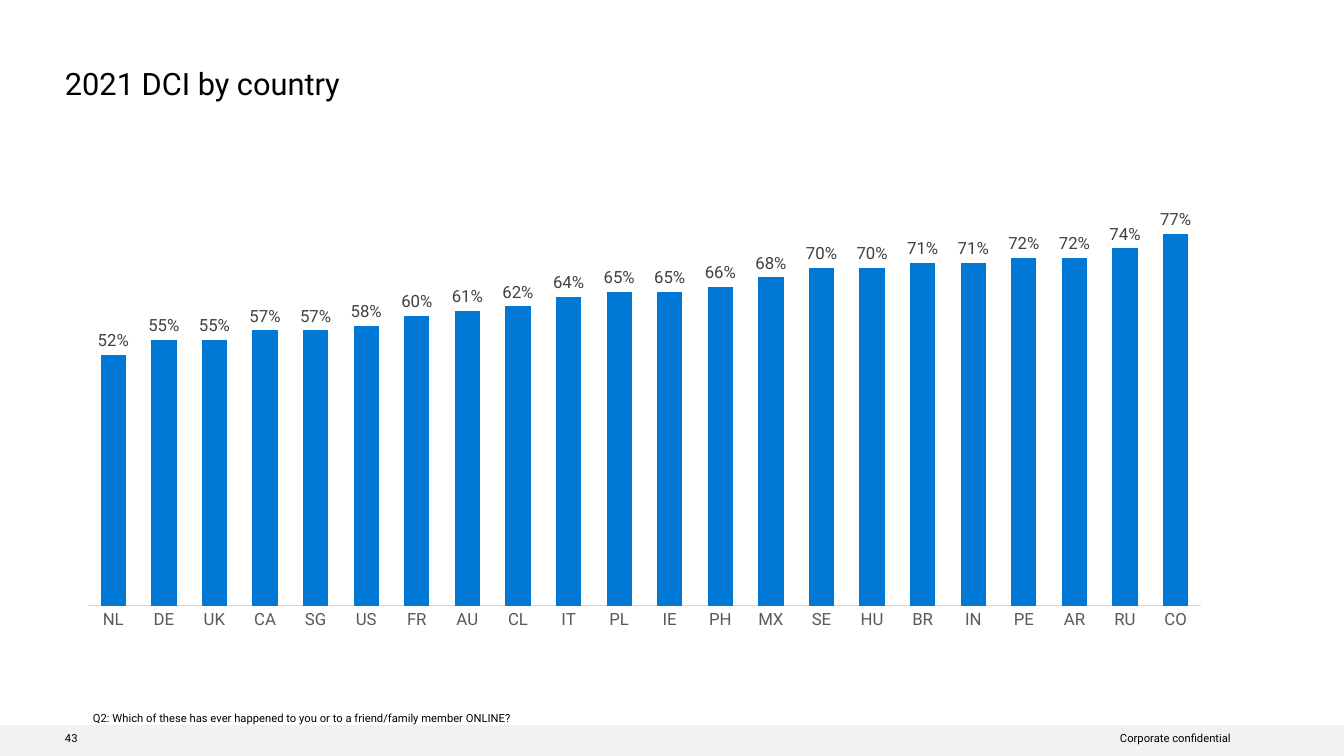
from lxml.etree import SubElement
from pptx import Presentation
from pptx.chart.data import CategoryChartData
from pptx.dml.color import RGBColor
from pptx.enum.chart import XL_CHART_TYPE as ChartType
from pptx.enum.chart import XL_LABEL_POSITION as LabelPosition
from pptx.enum.chart import XL_TICK_MARK as TickMark
from pptx.enum.shapes import MSO_SHAPE as Shape
from pptx.enum.text import MSO_ANCHOR as Anchor
from pptx.enum.text import PP_ALIGN as Align
from pptx.oxml.ns import qn
from pptx.util import Emu, Pt

TITLE = "2021 DCI by country"
QUESTION = "Q2: Which of these has ever happened to you or to a friend/family member ONLINE?"
PAGE_NUMBER = "43"
CONFIDENTIAL = "Corporate confidential"
PERCENT_BY_COUNTRY = {
    "NL": 52, "DE": 55, "UK": 55, "CA": 57, "SG": 57, "US": 58, "FR": 60, "AU": 61,
    "CL": 62, "IT": 64, "PL": 65, "IE": 65, "PH": 66, "MX": 68, "SE": 70, "HU": 70,
    "BR": 71, "IN": 71, "PE": 72, "AR": 72, "RU": 74, "CO": 77,
}

FONT = "Roboto"
BLACK = RGBColor(0x00, 0x00, 0x00)
BLUE = RGBColor(0x00, 0x78, 0xD4)
LABEL_GRAY = RGBColor(0x40, 0x40, 0x40)
AXIS_GRAY = RGBColor(0x59, 0x59, 0x59)
LINE_GRAY = RGBColor(0xD9, 0xD9, 0xD9)
FOOTER_GRAY = RGBColor(0xF2, 0xF2, 0xF2)

WIDTH, HEIGHT = 1344, 756
CHART_BOX = (65, 160, 1159, 480)
PLOT_BOX = (88, 171, 1113, 435)


def px(*lengths):
    return [Emu(round(length * 914400 / 100.8)) for length in lengths]


def style_font(font, size, color):
    font.name = FONT
    font.size = Pt(size)
    font.color.rgb = color


def add_text(slide, text, box, size=8, align=Align.LEFT, insets=(0, 0, 0, 0),
             line_spacing=0.9, wrap=True):
    frame = slide.shapes.add_textbox(*px(*box)).text_frame
    frame.word_wrap = wrap
    frame.vertical_anchor = Anchor.TOP
    (frame.margin_left, frame.margin_top,
     frame.margin_right, frame.margin_bottom) = px(*insets)
    paragraph = frame.paragraphs[0]
    paragraph.alignment = align
    paragraph.line_spacing = line_spacing
    run = paragraph.add_run()
    run.text = text
    style_font(run.font, size, BLACK)


def place_plot_area(chart):
    """Fix the inner plot area at PLOT_BOX, as fractions of CHART_BOX."""
    plot_area = chart.element.find(".//" + qn("c:plotArea"))
    layout = plot_area.find(qn("c:layout"))
    if layout is None:
        layout = SubElement(plot_area, qn("c:layout"))
        plot_area.insert(0, layout)
    manual = SubElement(layout, qn("c:manualLayout"))
    left, top, width, height = CHART_BOX
    plot_left, plot_top, plot_width, plot_height = PLOT_BOX
    settings = {
        "layoutTarget": "inner", "xMode": "edge", "yMode": "edge",
        "x": (plot_left - left) / width, "y": (plot_top - top) / height,
        "w": plot_width / width, "h": plot_height / height,
    }
    for tag, value in settings.items():
        SubElement(manual, qn("c:" + tag)).set("val", str(value))


def add_country_chart(slide):
    data = CategoryChartData(number_format="0%")
    data.categories = list(PERCENT_BY_COUNTRY)
    data.add_series("Series 1", [percent / 100 for percent in PERCENT_BY_COUNTRY.values()])
    chart = slide.shapes.add_chart(ChartType.COLUMN_CLUSTERED, *px(*CHART_BOX), data).chart
    chart.has_legend = False
    chart.has_title = False
    style_font(chart.font, 10, BLACK)

    value_axis = chart.value_axis
    value_axis.visible = False
    value_axis.has_major_gridlines = False
    value_axis.minimum_scale = 0
    value_axis.maximum_scale = 0.9
    value_axis.tick_labels.number_format = "0%"
    value_axis.tick_labels.number_format_is_linked = False

    category_axis = chart.category_axis
    category_axis.major_tick_mark = TickMark.NONE
    category_axis.format.line.color.rgb = LINE_GRAY
    category_axis.format.line.width = Pt(0.75)
    style_font(category_axis.tick_labels.font, 12, AXIS_GRAY)

    plot = chart.plots[0]
    plot.gap_width = 100
    plot.overlap = -27
    plot.vary_by_categories = False
    fill = plot.series[0].format.fill
    fill.solid()
    fill.fore_color.rgb = BLUE
    labels = plot.series[0].data_labels
    labels.show_value = True
    labels.position = LabelPosition.OUTSIDE_END
    labels.number_format = "0%"
    labels.number_format_is_linked = False
    style_font(labels.font, 12, LABEL_GRAY)
    place_plot_area(chart)


def main():
    presentation = Presentation()
    presentation.slide_width, presentation.slide_height = px(WIDTH, HEIGHT)
    slide = presentation.slides.add_slide(presentation.slide_layouts[6])

    footer = slide.shapes.add_shape(Shape.RECTANGLE, *px(0, 725, WIDTH, HEIGHT - 725))
    footer.shadow.inherit = False
    footer.fill.solid()
    footer.fill.fore_color.rgb = FOOTER_GRAY
    footer.line.fill.background()

    add_text(slide, PAGE_NUMBER, (65, 733, 504, 12))
    add_text(slide, CONFIDENTIAL, (861, 733, 370, 12), align=Align.RIGHT)
    add_text(slide, TITLE, (65, 65, 1150, 37), size=22, line_spacing=1)
    add_country_chart(slide)
    add_text(slide, QUESTION, (73, 717, 466, 44), insets=(20, 6, 20, 26), wrap=False)
    presentation.save("out.pptx")


if __name__ == "__main__":
    main()
